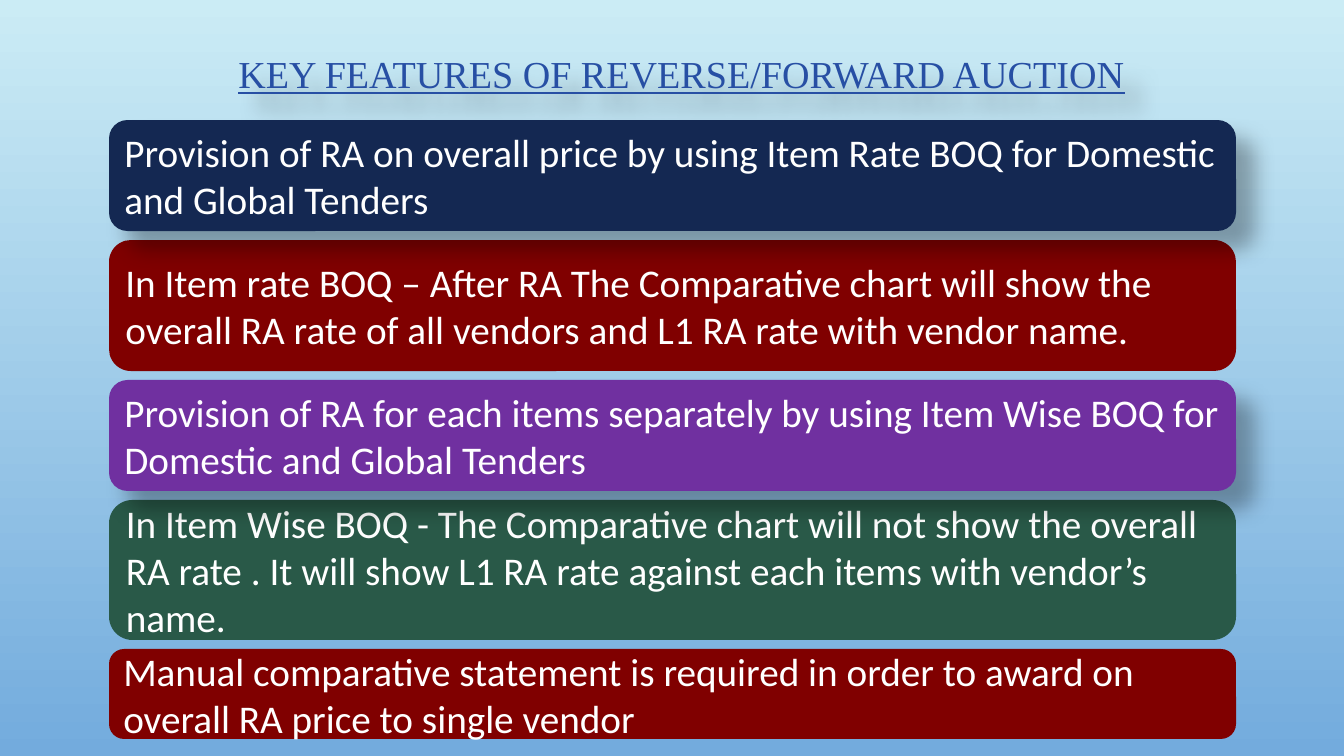
from itertools import accumulate

from lxml import etree
from pptx import Presentation, util as u
from pptx.dml.color import RGBColor
from pptx.enum import shapes, text
from pptx.oxml.ns import qn

HUES = {
    "sky": "CBECF5", "sea": "73ABDD", "title": "274FA4", "white": "FFFFFF",
    "navy": "142852", "red": "800000", "plum": "7030A0", "green": "295948",
    "black": "000000",
}
LEFT, TOP, WIDE, GAP = 109, 120, 1127, 9

# height, colour, shadow, wording; from top to bottom
CARDS = [
    (111, "navy", True, "Provision of RA on overall price by using Item Rate BOQ "
     "for Domestic and Global Tenders"),
    (131, "red", False, "In Item rate BOQ – After RA The Comparative chart will show "
     "the overall RA rate of all vendors and L1 RA rate with vendor name."),
    (111, "plum", True, "Provision of RA for each items separately by using Item Wise "
     "BOQ for Domestic and Global Tenders"),
    (140, "green", False, "In Item Wise BOQ - The Comparative chart will not show the "
     "overall RA rate . It will show L1 RA rate against each items with vendor’s name."),
    (90, "red", False, "Manual comparative statement is required in order to award on "
     "overall RA price to single vendor"),
]
ORDER = (1, 0, 3, 2, 4)  # shadowed cards lie over the card below them


def px(n):
    return u.Emu(round(n * 914400 / 100.8))


def rgb(name):
    return RGBColor.from_string(HUES[name])


class Deck:
    def __init__(self):
        self.prs = Presentation()
        self.prs.slide_width, self.prs.slide_height = px(1344), px(756)
        self.slide = self.prs.slides.add_slide(self.prs.slide_layouts[6])

    def back(self, *names):
        fill = self.slide.background.fill
        fill.gradient()
        fill.gradient_angle = 270
        for stop, name in zip(fill.gradient_stops, names):
            stop.color.rgb = rgb(name)

    def shade(self, shape):
        """Cast a soft shadow down to the right."""
        shape.shadow.inherit = False
        effects = shape.element.spPr.find(qn("a:effectLst"))
        outer = etree.SubElement(
            effects, qn("a:outerShdw"), blurRad=str(u.Pt(15)), dist=str(u.Pt(18)),
            dir=str(45 * 60000), algn="tl", rotWithShape="0")
        tint = etree.SubElement(outer, qn("a:srgbClr"), val=HUES["black"])
        etree.SubElement(tint, qn("a:alpha"), val="30000")

    def label(self, shape, words, face, size, hue, align, anchor):
        frame = shape.text_frame
        frame.word_wrap = True
        frame.vertical_anchor = anchor
        para = frame.paragraphs[0]
        para.text = words
        para.alignment = align
        font = para.font
        font.name, font.size, font.color.rgb = face, u.Pt(size), rgb(hue)
        return para

    def title(self, words, *area):
        box = self.slide.shapes.add_textbox(*map(px, area))
        para = self.label(box, words, "Times New Roman", 27.2, "title",
                          text.PP_ALIGN.CENTER, text.MSO_ANCHOR.BOTTOM)
        para.line_spacing = 0.8
        para.font.underline = True
        self.shade(box)

    def card(self, top, high, hue, shaded, words):
        box = self.slide.shapes.add_shape(
            shapes.MSO_SHAPE.ROUNDED_RECTANGLE, *map(px, (LEFT, top, WIDE, high)))
        box.shadow.inherit = False
        box.fill.solid()
        box.fill.fore_color.rgb = rgb(hue)
        box.line.fill.background()
        self.label(box, words, "Calibri", 28, "white",
                   text.PP_ALIGN.LEFT, text.MSO_ANCHOR.MIDDLE)
        if shaded:
            self.shade(box)


def main():
    deck = Deck()
    deck.back("sky", "sea")
    deck.title("KEY FEATURES OF REVERSE/FORWARD AUCTION", 228, 29, 907, 72)
    tops = list(accumulate((card[0] + GAP for card in CARDS), initial=TOP))
    for i in ORDER:
        deck.card(tops[i], *CARDS[i])
    deck.prs.save("out.pptx")


if __name__ == "__main__":
    main()
